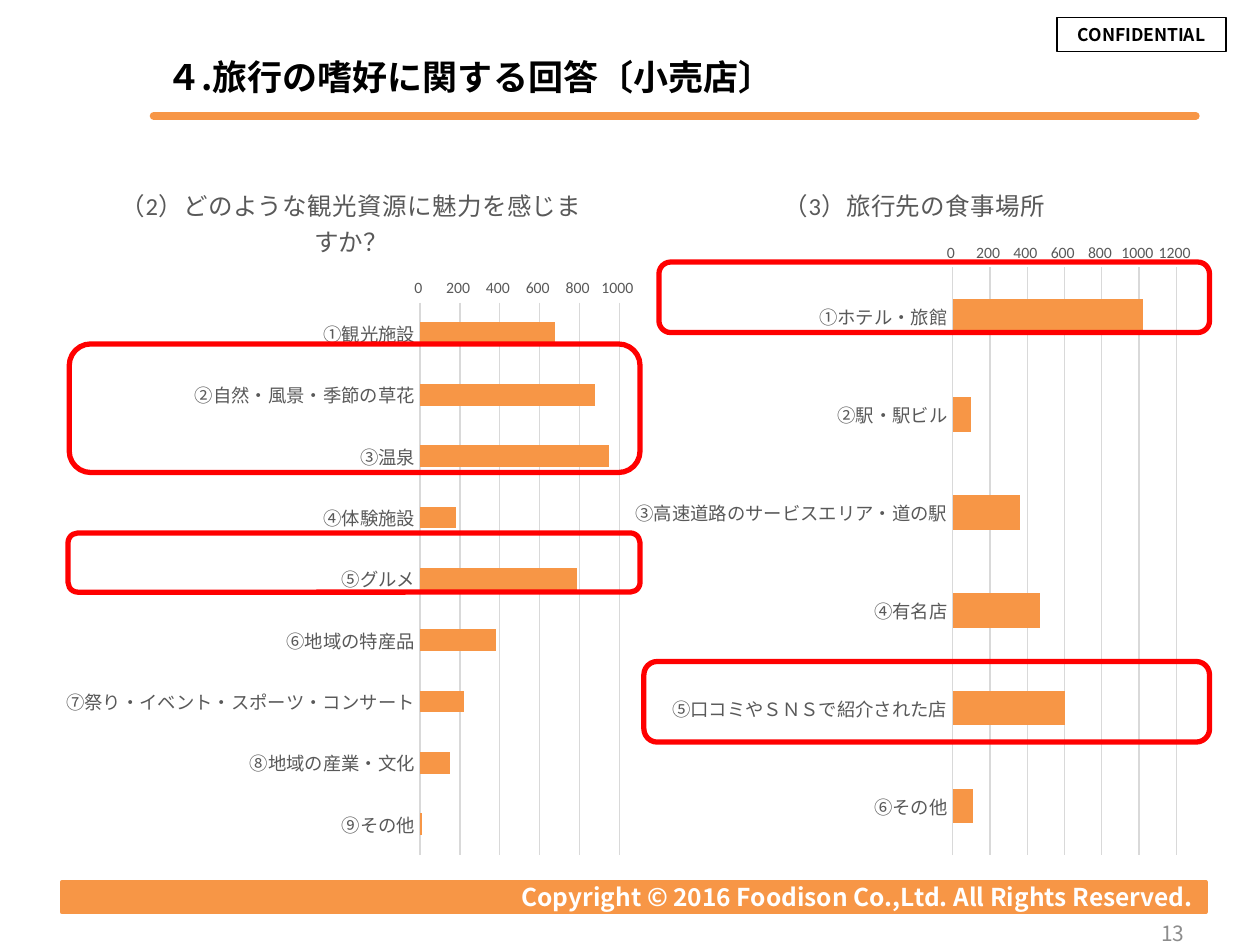
import pptx
import pptx.chart.data
import pptx.dml.color
import pptx.enum.chart
import pptx.enum.shapes
import pptx.enum.text
import pptx.oxml.ns
import pptx.util
from lxml import etree
from pptx.util import Inches

COLORS = {
    "orange": "F79646",
    "red": "FF0000",
    "black": "000000",
    "white": "FFFFFF",
    "label": "595959",
    "grid": "D9D9D9",
    "number": "8C8C8C",
}
ALIGN = pptx.enum.text.PP_ALIGN
SHAPES = pptx.enum.shapes.MSO_SHAPE
qn = pptx.oxml.ns.qn


class SlideBuilder:
    """Holds the style and the current slide, and adds each kind of element."""

    text_font = "Noto Sans CJK JP"
    chart_font = "Calibri"

    def __init__(self, slide):
        self.slide = slide

    def color(self, name):
        return pptx.dml.color.RGBColor.from_string(COLORS[name])

    def style_line(self, line, color, width):
        line.color.rgb = self.color(color)
        line.width = pptx.util.Pt(width)

    def style_font(self, font, size, color, name, bold=False):
        font.size = pptx.util.Pt(size)
        font.color.rgb = self.color(color)
        font.name = name
        font.bold = bold

    def set_text(self, shape, text, size, color, align, bold=False):
        frame = shape.text_frame
        frame.text = text
        frame.word_wrap = True
        frame.vertical_anchor = pptx.enum.text.MSO_ANCHOR.MIDDLE
        paragraph = frame.paragraphs[0]
        paragraph.alignment = align
        for run in paragraph.runs:
            self.style_font(run.font, size, color, self.text_font, bold)
            latin = run.font._element.find(qn("a:latin"))
            east_asian = etree.Element(qn("a:ea"), typeface=self.text_font)
            latin.addnext(east_asian)

    def text(self, box, text, size, color, align, bold=False):
        shape = self.slide.shapes.add_textbox(*map(Inches, box))
        self.set_text(shape, text, size, color, align, bold)

    def shape(self, kind, box, line, width, fill=None):
        shape = self.slide.shapes.add_shape(kind, *map(Inches, box))
        shape.shadow.inherit = False
        self.style_line(shape.line, line, width)
        if fill:
            shape.fill.solid()
            shape.fill.fore_color.rgb = self.color(fill)
        else:
            shape.fill.background()
        return shape

    def rule(self, left, right, top, color, width):
        connector = self.slide.shapes.add_connector(
            pptx.enum.shapes.MSO_CONNECTOR.STRAIGHT,
            Inches(left), Inches(top), Inches(right), Inches(top))
        self.style_line(connector.line, color, width)
        properties = connector._element.spPr
        properties.find(qn("a:ln")).set("cap", "rnd")
        etree.SubElement(properties, qn("a:effectLst"))

    def bar_chart(self, box, title, answers, maximum):
        data = pptx.chart.data.CategoryChartData()
        data.categories = list(answers)
        data.add_series("Series 1", list(answers.values()))
        chart = self.slide.shapes.add_chart(
            pptx.enum.chart.XL_CHART_TYPE.BAR_CLUSTERED,
            *map(Inches, box), data).chart
        chart.has_legend = False
        self.style_font(chart.font, 10, "black", self.chart_font)

        chart.has_title = True
        chart.chart_title.include_in_layout = False
        frame = chart.chart_title.text_frame
        frame.text = title
        self.style_font(frame.paragraphs[0].runs[0].font, 14, "label", self.chart_font)

        plot = chart.plots[0]
        plot.gap_width = 182
        plot.vary_by_categories = False
        fill = plot.series[0].format.fill
        fill.solid()
        fill.fore_color.rgb = self.color("orange")

        for axis, size in ((chart.category_axis, 10.5), (chart.value_axis, 9)):
            axis.major_tick_mark = pptx.enum.chart.XL_TICK_MARK.NONE
            axis.minor_tick_mark = pptx.enum.chart.XL_TICK_MARK.NONE
            self.style_font(axis.tick_labels.font, size, "label", self.chart_font)
        chart.category_axis.reverse_order = True
        self.style_line(chart.category_axis.format.line, "grid", 0.75)

        value_axis = chart.value_axis
        value_axis.minimum_scale = 0
        value_axis.maximum_scale = maximum
        value_axis.major_unit = 200
        value_axis.format.line.fill.background()
        value_axis.has_major_gridlines = True
        self.style_line(value_axis.major_gridlines.format.line, "grid", 0.75)
        value_axis.tick_labels.number_format = r"0_);[Red]\(0\)"
        value_axis.tick_labels.number_format_is_linked = False


def main():
    presentation = pptx.Presentation()
    presentation.slide_width = Inches(10)
    presentation.slide_height = Inches(7.5)
    builder = SlideBuilder(presentation.slides.add_slide(presentation.slide_layouts[6]))

    builder.rule(1.22, 9.49, 0.92, "orange", 4.5)
    footer = builder.shape(SHAPES.RECTANGLE, (0.49, 7, 9.08, 0.24), "orange", 2, "orange")
    builder.set_text(footer, "Copyright © 2016 Foodison Co.,Ltd. All Rights Reserved.",
                     14, "white", ALIGN.RIGHT, True)
    stamp = builder.shape(SHAPES.RECTANGLE, (8.39, 0.14, 1.34, 0.27), "black", 0.75)
    builder.set_text(stamp, "CONFIDENTIAL", 10, "black", ALIGN.CENTER, True)

    attractions = {
        "①観光施設": 680,
        "②自然・風景・季節の草花": 880,
        "③温泉": 950,
        "④体験施設": 180,
        "⑤グルメ": 790,
        "⑥地域の特産品": 380,
        "⑦祭り・イベント・スポーツ・コンサート": 220,
        "⑧地域の産業・文化": 150,
        "⑨その他": 10,
    }
    dining_places = {
        "①ホテル・旅館": 1020,
        "②駅・駅ビル": 100,
        "③高速道路のサービスエリア・道の駅": 360,
        "④有名店": 470,
        "⑤口コミやＳＮＳで紹介された店": 600,
        "⑥その他": 110,
    }
    builder.bar_chart((0.43, 1.26, 4.72, 5.64),
                      "（2）どのような観光資源に魅力を感じますか？", attractions, 1000)
    builder.bar_chart((4.95, 1.26, 4.62, 5.64),
                      "（3）旅行先の食事場所", dining_places, 1200)

    builder.text((7.17, 7.21, 2.33, 0.4), "13", 12, "number", ALIGN.RIGHT)
    builder.text((1.22, 0.3, 8.28, 0.61), "４.旅行の嗜好に関する回答〔小売店〕",
                 20, "black", ALIGN.LEFT, True)

    highlights = (
        (0.54, 4.23, 4.54, 0.47),
        (0.55, 2.73, 4.53, 1.02),
        (5.23, 2.08, 4.37, 0.56),
        (5.11, 5.25, 4.49, 0.64),
    )
    for box in highlights:
        builder.shape(SHAPES.ROUNDED_RECTANGLE, box, "red", 3)

    presentation.save("out.pptx")


if __name__ == "__main__":
    main()
